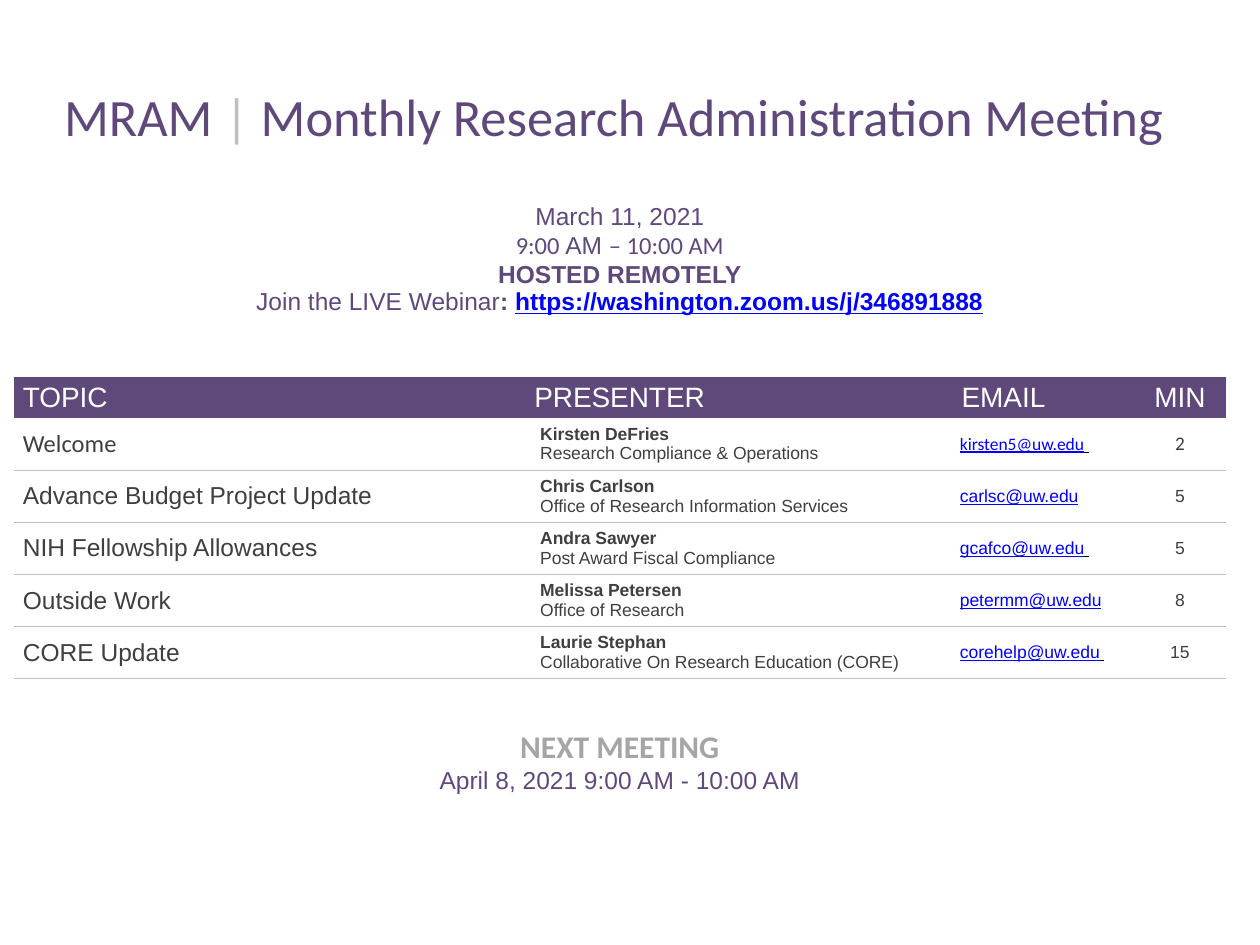
import pptx
import pptx.util
import pptx.dml.color
import pptx.enum.text
import pptx.oxml.ns
import lxml.etree

Cm = pptx.util.Cm
RGBColor = pptx.dml.color.RGBColor
ALIGN = pptx.enum.text.PP_ALIGN
ANCHOR = pptx.enum.text.MSO_ANCHOR
qn = pptx.oxml.ns.qn

PURPLE = RGBColor(0x5F, 0x49, 0x7A)
SILVER = RGBColor(0xBF, 0xBF, 0xBF)
GRAY = RGBColor(0xA5, 0xA5, 0xA5)
DARK = RGBColor(0x3F, 0x3F, 0x3F)
BLUE = RGBColor(0x00, 0x00, 0xFF)
BLACK = RGBColor(0x00, 0x00, 0x00)
WHITE = RGBColor(0xFF, 0xFF, 0xFF)
NO_GRID_STYLE = "{2D5ABB26-0587-4C30-8999-92F81FD0307C}"


def run(text, size, color, font="Arial", bold=False, underline=False):
    return text, size, color, font, bold, underline


TITLE = [[
    run("MRAM ", 30, PURPLE, "Calibri"),
    run("|", 30, SILVER, "Calibri"),
    run(" Monthly Research Administration Meeting ", 30, PURPLE, "Calibri"),
]]
DETAILS = [
    [run("March 11, 2021", 14, PURPLE)],
    [run("9:00 ", 14, PURPLE, "Calibri"), run("AM ", 14, PURPLE),
     run("– 10:00 AM", 14, PURPLE, "Calibri")],
    [run("HOSTED REMOTELY", 14, PURPLE, bold=True)],
    [run("Join the LIVE Webinar", 14, PURPLE), run(": ", 14, PURPLE, bold=True),
     run("https://washington.zoom.us/j/346891888", 14, BLUE, bold=True, underline=True)],
]
HEADERS = ["TOPIC", "PRESENTER", " EMAIL", "MIN"]
AGENDA = [
    ("Welcome", "Kirsten DeFries", "Research Compliance & Operations",
     "kirsten5@uw.edu", True, "2"),
    ("Advance Budget Project Update", "Chris Carlson",
     "Office of Research Information Services", "carlsc@uw.edu", False, "5"),
    ("NIH Fellowship Allowances", "Andra Sawyer", "Post Award Fiscal Compliance",
     "gcafco@uw.edu", True, "5"),
    ("Outside Work", "Melissa Petersen", "Office of Research",
     "petermm@uw.edu", False, "8"),
    ("CORE Update", "Laurie Stephan", "Collaborative On Research Education (CORE)",
     "corehelp@uw.edu", True, "15"),
]
NEXT_MEETING = [
    [run("NEXT MEETING", 18, GRAY, "Calibri", bold=True)],
    [run("April 8, 2021 9:00 AM - 10:00 AM", 14, PURPLE)],
]

COLUMN_WIDTHS = [10.31, 8.46, 3.81, 1.85]
ROW_HEIGHTS = [1.57, 4.55, 0.84] + [1.05] * len(AGENDA) + [2.36]
FIRST_AGENDA_ROW = 3
NARROW, WIDE = 0.18, 0.3


def fill_cell(cell, paragraphs, side=NARROW, align=ALIGN.LEFT,
              anchor=ANCHOR.MIDDLE, fill=WHITE, top=0, bottom=0):
    cell.fill.solid()
    cell.fill.fore_color.rgb = fill
    cell.vertical_anchor = anchor
    cell.margin_left = cell.margin_right = Cm(side)
    cell.margin_top, cell.margin_bottom = Cm(top), Cm(bottom)
    frame = cell.text_frame
    frame.text = "\n".join("" for _ in paragraphs)
    for paragraph, runs in zip(frame.paragraphs, paragraphs):
        paragraph.alignment = align
        for text, size, color, font, bold, underline in runs:
            span = paragraph.add_run()
            span.text = text
            span.font.size = pptx.util.Pt(size)
            span.font.color.rgb = color
            span.font.name = font
            span.font.bold = bold
            span.font.underline = underline


def add_border(cell, position, tag):
    properties = cell._tc.get_or_add_tcPr()
    line = lxml.etree.Element(qn(tag), w="12700")
    solid = lxml.etree.SubElement(line, qn("a:solidFill"))
    lxml.etree.SubElement(solid, qn("a:srgbClr"), val=str(SILVER))
    properties.insert(position, line)


def merged_row(table, row):
    cell = table.cell(row, 0)
    cell.merge(table.cell(row, len(COLUMN_WIDTHS) - 1))
    return cell


def fill_agenda_row(table, row, item):
    topic, name, office, email, underlined_space, minutes = item
    first = row == FIRST_AGENDA_ROW
    font = "Calibri" if first else "Arial"
    fill_cell(table.cell(row, 0), [[run(topic, 14, DARK, font)]])
    fill_cell(table.cell(row, 1), [[run(name, 10, DARK, bold=True)],
                                   [run(office, 10, DARK)]], side=WIDE)
    fill_cell(table.cell(row, 2), [[run(email, 10, BLUE, font, underline=True),
                                    run(" ", 10, BLACK, underline=underlined_space)]],
              side=WIDE)
    fill_cell(table.cell(row, 3), [[run(minutes, 11 if first else 10, DARK, font)]],
              align=ALIGN.CENTER)


def main():
    deck = pptx.Presentation()
    deck.slide_width, deck.slide_height = Cm(25.4), Cm(19.05)
    page = deck.slides.add_slide(deck.slide_layouts[6])
    frame = page.shapes.add_table(len(ROW_HEIGHTS), len(COLUMN_WIDTHS), Cm(0.28), Cm(1.47),
                                  Cm(sum(COLUMN_WIDTHS)), Cm(sum(ROW_HEIGHTS)))
    table = frame.table
    table.first_row = table.horz_banding = False
    next(frame.element.iter(qn("a:tableStyleId"))).text = NO_GRID_STYLE
    for column, width in zip(table.columns, COLUMN_WIDTHS):
        column.width = Cm(width)
    for row, height in zip(table.rows, ROW_HEIGHTS):
        row.height = Cm(height)

    last_row = len(ROW_HEIGHTS) - 1
    fill_cell(merged_row(table, 0), TITLE, align=ALIGN.CENTER, anchor=ANCHOR.BOTTOM)
    fill_cell(merged_row(table, 1), DETAILS, align=ALIGN.CENTER,
              anchor=ANCHOR.BOTTOM, bottom=1.22)
    for index, header in enumerate(HEADERS):
        fill_cell(table.cell(2, index), [[run(header, 16, WHITE)]], fill=PURPLE,
                  align=ALIGN.CENTER if header == "MIN" else ALIGN.LEFT)
    for row, item in enumerate(AGENDA, FIRST_AGENDA_ROW):
        fill_agenda_row(table, row, item)
    fill_cell(merged_row(table, last_row), NEXT_MEETING, align=ALIGN.CENTER, top=1)

    for row in range(FIRST_AGENDA_ROW, last_row):
        for column in range(len(COLUMN_WIDTHS)):
            add_border(table.cell(row, column), 0, "a:lnB")
            add_border(table.cell(row + 1, column), 0, "a:lnT")
    deck.save("out.pptx")


if __name__ == "__main__":
    main()
